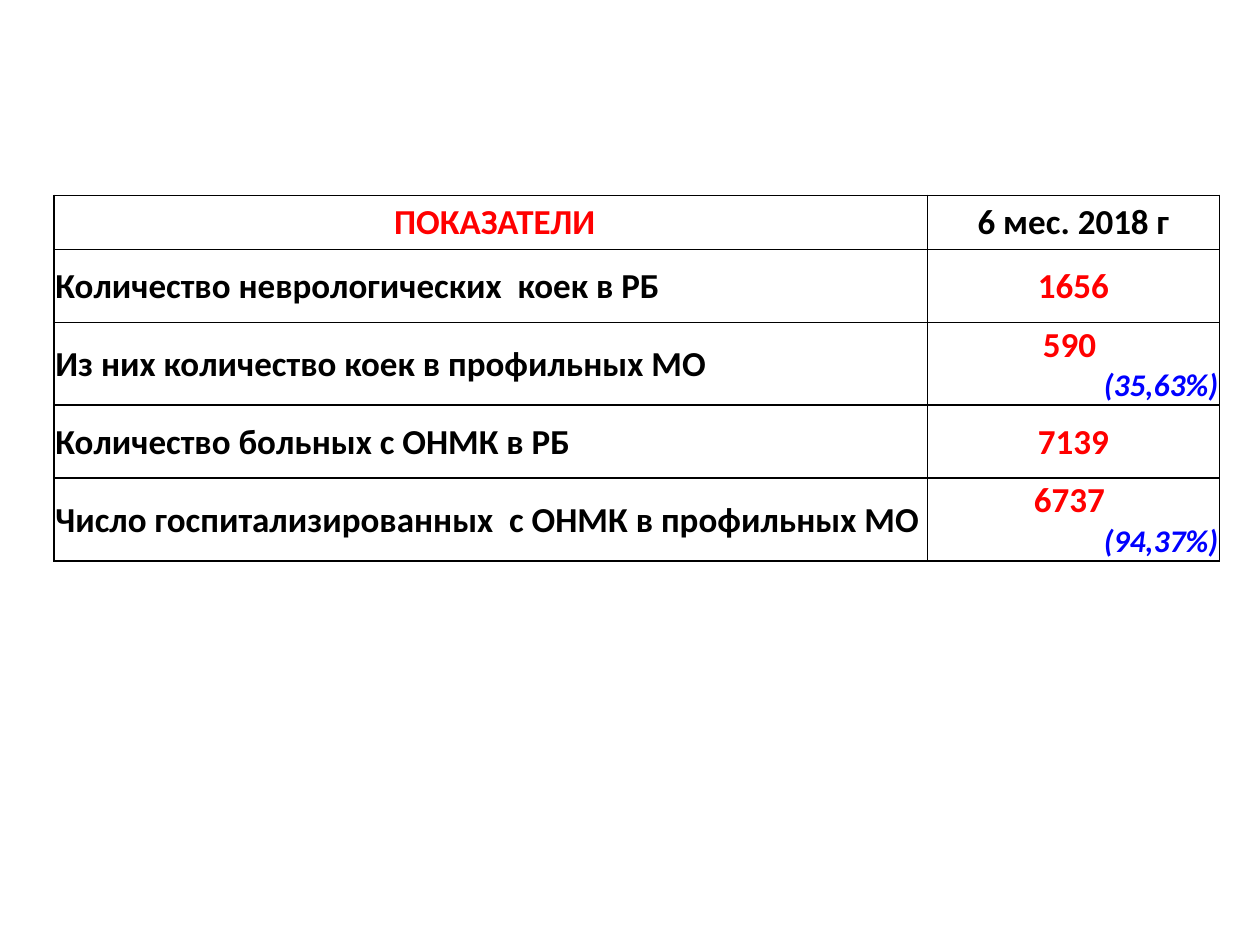
from lxml import etree
from pptx import Presentation
from pptx.dml.color import RGBColor
from pptx.enum.text import MSO_ANCHOR, PP_ALIGN
from pptx.oxml.ns import qn
from pptx.util import Inches, Pt

LEFT, CENTER, RIGHT = PP_ALIGN.LEFT, PP_ALIGN.CENTER, PP_ALIGN.RIGHT
MIDDLE = MSO_ANCHOR.MIDDLE
BLACK, RED, BLUE = "000000", "FF0000", "0000FF"


def write(paragraph, text, color=BLACK, size=20, italic=False, align=LEFT):
    paragraph.alignment = align
    run = paragraph.add_run()
    run.text = text
    run.font.name = "Calibri"
    run.font.size = Pt(size)
    run.font.bold = True
    run.font.italic = italic
    run.font.color.rgb = RGBColor.from_string(color)


def add_borders(cell, color=BLACK, width=1):
    properties = cell._tc.get_or_add_tcPr()
    for position, side in enumerate(("lnL", "lnR", "lnT", "lnB")):
        line = etree.Element(qn(f"a:{side}"), w=str(Pt(width)))
        fill = etree.SubElement(line, qn("a:solidFill"))
        etree.SubElement(fill, qn("a:srgbClr"), val=color)
        properties.insert(position, line)


indicators = [
    ("Количество неврологических  коек в РБ", "1656", None),
    ("Из них количество коек в профильных МО", "590 ", "(35,63%)"),
    ("Количество больных с ОНМК в РБ", "7139", None),
    ("Число госпитализированных  с ОНМК в профильных МО", "6737 ", "(94,37%)"),
]

presentation = Presentation()
presentation.slide_width = Inches(10)
presentation.slide_height = Inches(7.5)
slide = presentation.slides.add_slide(presentation.slide_layouts[6])

table = slide.shapes.add_table(
    len(indicators) + 1, 2, Inches(0.43), Inches(1.55), Inches(9.25), Inches(2.75)
).table
table.first_row = False
table.horz_banding = False
table.columns[0].width = Inches(6.93)
table.columns[1].width = Inches(2.32)
for row in table.rows:
    row.height = Inches(0.58)
table.rows[0].height = Inches(0.43)

for cell in table.iter_cells():
    cell.fill.background()
    cell.vertical_anchor = MIDDLE
    cell.margin_left = cell.margin_top = cell.margin_right = Inches(0.01)
    cell.margin_bottom = 0
    add_borders(cell)

write(table.cell(0, 0).text_frame.paragraphs[0], " ПОКАЗАТЕЛИ", color=RED, align=CENTER)
write(table.cell(0, 1).text_frame.paragraphs[0], "6 мес. 2018 г", align=CENTER)

for row_number, (label, value, share) in enumerate(indicators, start=1):
    write(table.cell(row_number, 0).text_frame.paragraphs[0], label)
    value_frame = table.cell(row_number, 1).text_frame
    write(value_frame.paragraphs[0], value, color=RED, align=CENTER)
    if share:
        write(value_frame.add_paragraph(), share, color=BLUE, size=18, italic=True, align=RIGHT)

presentation.save("out.pptx")
